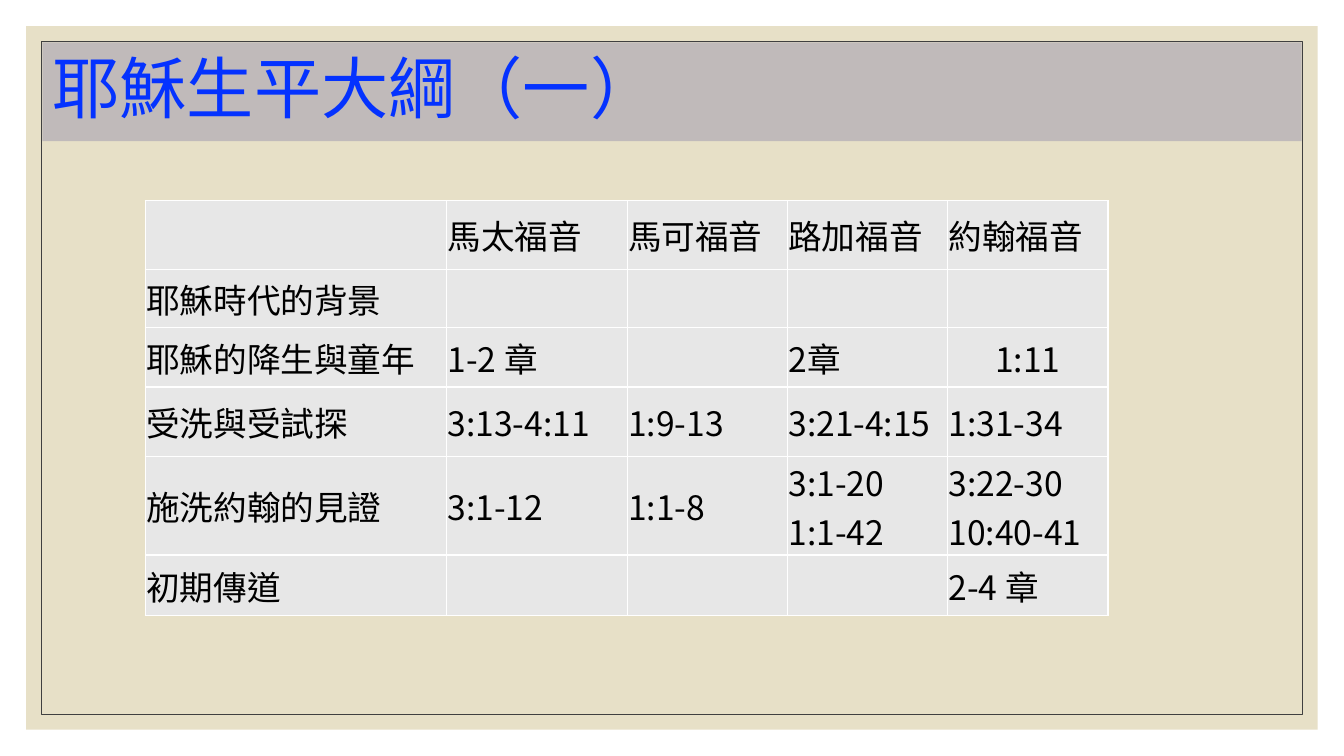
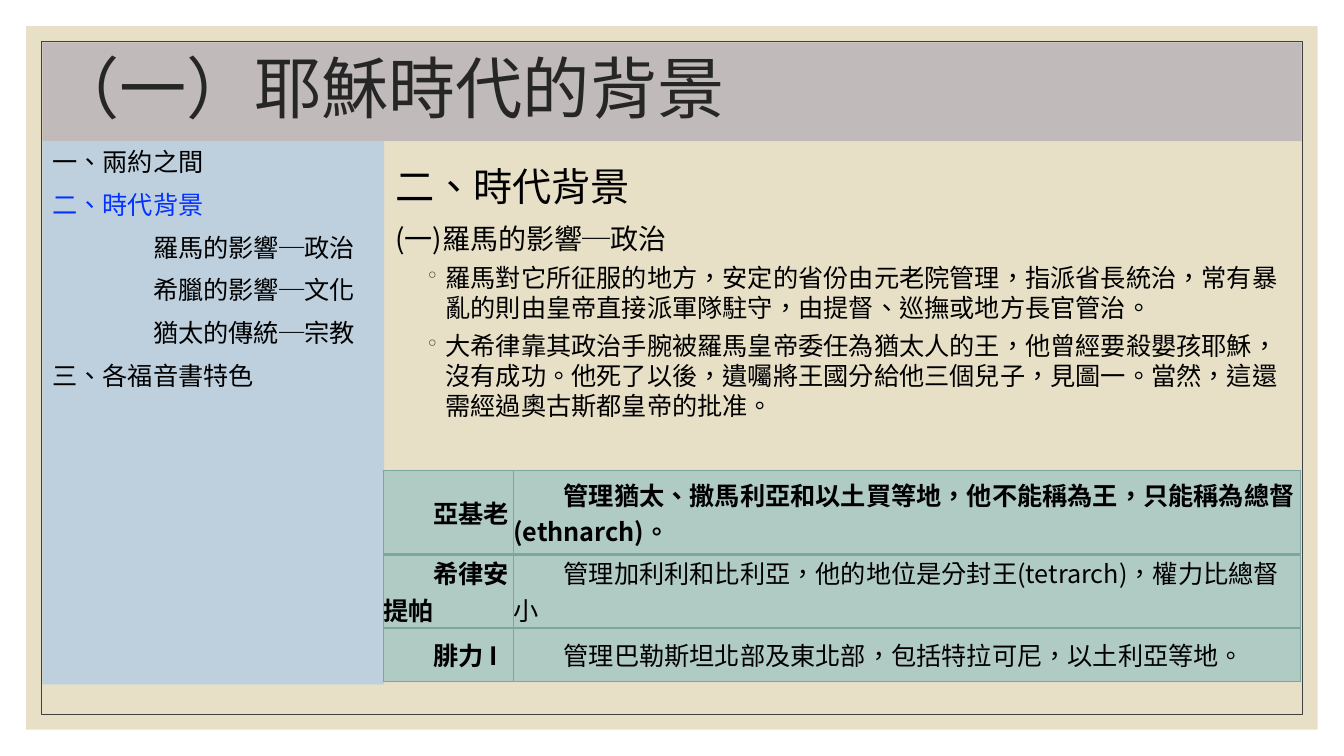
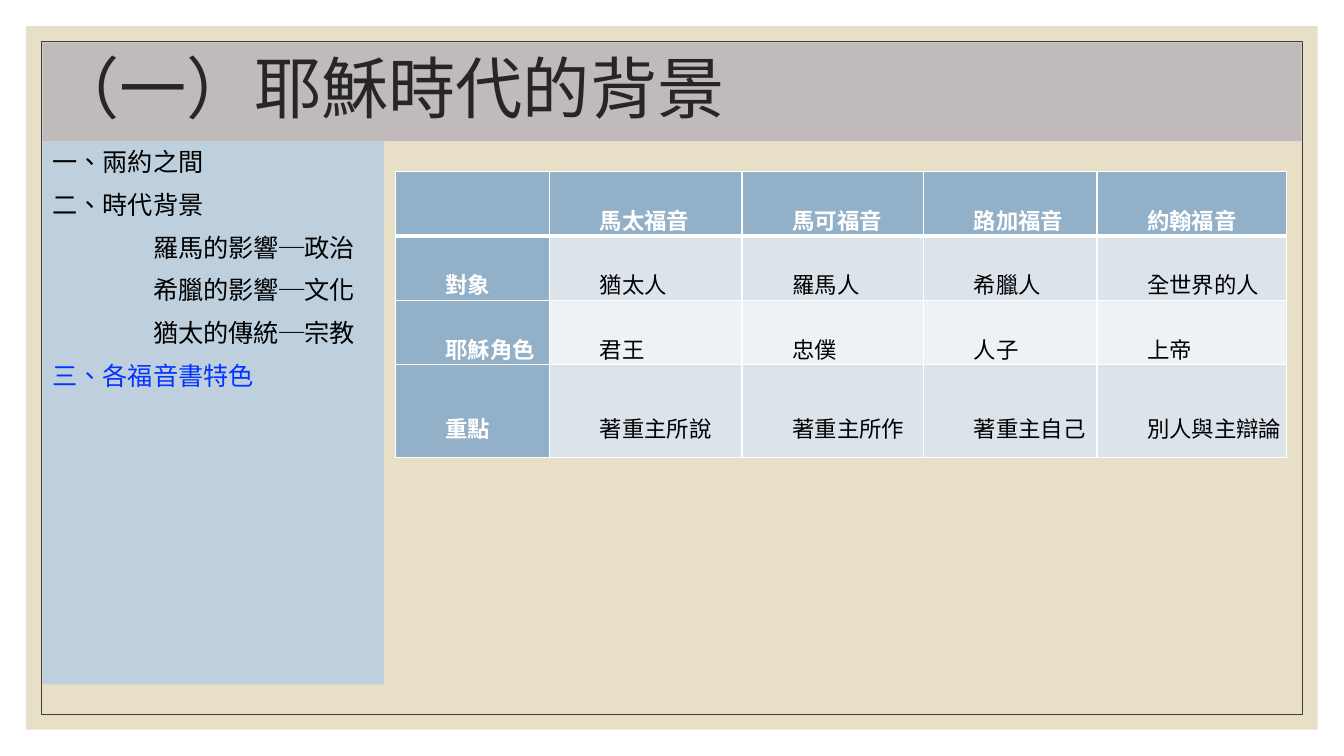
from lxml.etree import SubElement
from pptx import Presentation
from pptx.dml.color import RGBColor
from pptx.enum.shapes import MSO_SHAPE as Shape
from pptx.enum.text import MSO_ANCHOR as Anchor, MSO_AUTO_SIZE as AutoSize, PP_ALIGN as Align
from pptx.oxml import parse_xml
from pptx.oxml.ns import nsdecls, qn
from pptx.util import Emu, Inches, Pt

FONT = "Noto Sans CJK SC"
COLORS = {
    "paper": "E7E0C7", "frame": "404040", "band": "C0BABA", "side": "BED0DE",
    "ink": "262626", "black": "000000", "white": "FFFFFF", "accent": "0432FF",
    "gray": "E7E7E7", "green": "B0CAC4", "green line": "7BA79D",
    "head": "92B0C8", "odd": "DCE4EB", "even": "EEF2F5",
}
# Shared layout, in inches
WIDTH, HEIGHT = 13.33, 7.5
PAPER_MARGIN, FRAME_MARGIN = 0.26, 0.41
BAND = (0.42, 0.42, 12.49, 0.98)
SIDE = (0.42, 1.4, 3.39, 5.39)
BODY = (3.82, 1.56, 9.09, 5.23)
TAB = 1

OUTLINE = ["一、兩約之間", "二、時代背景", "\t羅馬的影響─政治",
           "\t希臘的影響─文化", "\t猶太的傳統─宗教", "三、各福音書特色"]
GOSPELS = ["馬太福音", "馬可福音", "路加福音", "約翰福音"]


def rgb(name):
    return RGBColor.from_string(COLORS[name])


def inches(*lengths):
    return [Inches(length) for length in lengths]


def set_font(para, size, color="black", bold=False):
    font = para.font
    font.size, font.bold, font.name = Pt(size), bold, FONT
    font.color.rgb = rgb(color)
    properties = font._element
    properties.set("lang", "zh-TW")
    SubElement(properties, qn("a:ea")).set("typeface", FONT)


def set_indent(para, left, first):
    properties = para._p.get_or_add_pPr()
    properties.set("marL", str(Inches(left)))
    properties.set("indent", str(Inches(first)))


def add_before_font(para, *parts):
    font = para._p.pPr.find(qn("a:defRPr"))
    for tag in parts:
        name, rest = tag.split(" ", 1)
        font.addprevious(parse_xml(f'<a:{name} {nsdecls("a")} {rest}'))


def add_bullet(para):
    """Hang the paragraph behind a small ring."""
    set_indent(para, 0.5, -0.2)
    add_before_font(para, f'buClr ><a:srgbClr val="{COLORS["ink"]}"/></a:buClr>',
                    'buSzPct val="70000"/>', 'buChar char="◦"/>')


def add_tab_stop(para):
    add_before_font(para, f'tabLst ><a:tab pos="{Inches(TAB)}" algn="l"/></a:tabLst>')


# Frame behind every slide
def add_frame(page, layout):
    def add_sheet(margin):
        sheet = page.shapes.add_shape(
            Shape.RECTANGLE,
            *inches(margin, margin, WIDTH - 2 * margin, HEIGHT - 2 * margin))
        sheet.shadow.inherit = False
        return sheet

    paper, frame = add_sheet(PAPER_MARGIN), add_sheet(FRAME_MARGIN)
    paper.fill.solid()
    paper.fill.fore_color.rgb = rgb("paper")
    paper.line.fill.background()
    frame.fill.background()
    frame.line.color.rgb = rgb("frame")
    frame.line.width = Pt(0.5)
    for index, sheet in enumerate((paper, frame), start=2):
        layout.shapes.element.insert(index, sheet.element)


def add_page(deck, title, color="ink"):
    page = deck.slides.add_slide(deck.slide_layouts[5])
    band = page.shapes.title
    band.left, band.top, band.width, band.height = inches(*BAND)
    band.fill.solid()
    band.fill.fore_color.rgb = rgb("band")
    frame = band.text_frame
    frame.text = title
    frame.auto_size = AutoSize.NONE
    frame.vertical_anchor = Anchor.MIDDLE
    para = frame.paragraphs[0]
    para.alignment, para.line_spacing = Align.LEFT, 0.9
    set_font(para, 48, color)
    return page


def add_text(page, area, lines):
    """Each line is (text, size, color, space before, bulleted)."""
    box = page.shapes.add_textbox(*inches(*area))
    frame = box.text_frame
    frame.word_wrap = True
    frame.text = "\n".join(line[0] for line in lines)
    for para, (text, size, color, before, bulleted) in zip(frame.paragraphs, lines):
        para.space_before, para.line_spacing = Pt(before), 1.0
        set_font(para, size, color)
        if bulleted:
            add_bullet(para)
        if text.startswith("\t"):
            add_tab_stop(para)
    return box


def add_outline(page, current):
    lines = [(text, 18, "accent" if index == current else "black", 9, False)
             for index, text in enumerate(OUTLINE)]
    side = add_text(page, SIDE, lines)
    side.fill.solid()
    side.fill.fore_color.rgb = rgb("side")


# Tables
def set_borders(cell, color, top, bottom):
    widths = {"L": 1, "R": 1, "T": top, "B": bottom}
    for index, (side, width) in enumerate(widths.items()):
        cell._tc.get_or_add_tcPr().insert(index, parse_xml(
            f'<a:ln{side} {nsdecls("a")} w="{Pt(width)}"><a:solidFill>'
            f'<a:srgbClr val="{COLORS[color]}"/></a:solidFill></a:ln{side}>'))


def add_grid(page, corner, widths, heights, rows, look, line, size,
             inset=0, indent=0, spacing=None, head_line=1):
    """look(row, column) gives fill, text colour and bold."""
    area = (*corner, sum(widths), sum(heights))
    table = page.shapes.add_table(len(rows), len(widths), *inches(*area)).table
    table.first_row = table.horz_banding = False
    for column, width in zip(table.columns, widths):
        column.width = Inches(width)
    for row, height in zip(table.rows, heights):
        row.height = Inches(height)
    for r, texts in enumerate(rows):
        for c, text in enumerate(texts):
            cell = table.cell(r, c)
            fill, color, bold = look(r, c)
            cell.text = text
            cell.vertical_anchor = Anchor.MIDDLE
            cell.margin_left = cell.margin_right = cell.margin_top = Inches(inset)
            cell.margin_bottom = Emu(0)
            cell.fill.solid()
            cell.fill.fore_color.rgb = rgb(fill)
            set_borders(cell, line, head_line if r == 1 else 1, head_line if r == 0 else 1)
            for para in cell.text_frame.paragraphs:
                if spacing:
                    para.line_spacing = spacing
                set_indent(para, 0, indent)
                set_font(para, size, color, bold)
    return table


# Slides
def add_life_overview(deck):
    page = add_page(deck, "耶穌生平大綱（一）", "accent")
    rows = [
        ["", *GOSPELS],
        ["耶穌時代的背景", "", "", "", ""],
        ["耶穌的降生與童年", "1-2 章", "", "2章", "1:11"],
        ["受洗與受試探", "3:13-4:11", "1:9-13", "3:21-4:15", "1:31-34"],
        ["施洗約翰的見證", "3:1-12", "1:1-8", "3:1-20\n1:1-42", "3:22-30\n10:40-41"],
        ["初期傳道", "", "", "", "2-4 章"],
    ]
    table = add_grid(page, (1.44, 1.99), [2.99, 1.79, 1.59, 1.59, 1.59],
                     [0.68, 0.58, 0.59, 0.69, 0.67, 0.6], rows,
                     lambda r, c: ("gray", "black", False), "white", 24, inset=0.01)
    table.cell(2, 4).text_frame.paragraphs[0].alignment = Align.CENTER
    return page


def add_roman_rule(deck):
    page = add_page(deck, "（一）耶穌時代的背景")
    add_outline(page, 1)
    add_text(page, BODY, [
        ("二、時代背景", 28, "black", 9, False),
        ("(一)羅馬的影響─政治", 20, "black", 9, False),
        ("羅馬對它所征服的地方，安定的省份由元老院管理，指派省長統治，"
         "常有暴亂的則由皇帝直接派軍隊駐守，由提督、巡撫或地方長官管治。",
         18, "black", 5, True),
        ("大希律靠其政治手腕被羅馬皇帝委任為猶太人的王，他曾經要殺嬰孩耶穌，沒有成功。"
         "他死了以後，遺囑將王國分給他三個兒子，見圖一。當然，這還需經過奧古斯都皇帝的批准。",
         18, "black", 5, True),
    ])
    rows = [
        ["亞基老", "管理猶太、撒馬利亞和以土買等地，他不能稱為王，只能稱為總督(ethnarch)。"],
        ["希律安提帕", "管理加利利和比利亞，他的地位是分封王(tetrarch)，權力比總督小"],
        ["腓力 I", "管理巴勒斯坦北部及東北部，包括特拉可尼，以土利亞等地。"],
    ]
    add_grid(page, (3.8, 4.67), [1.29, 7.81], [0.83, 0.73, 0.53], rows,
             lambda r, c: ("green", "black", r == 0 or c == 0), "green line", 18,
             indent=0.5, head_line=2)


def add_gospel_traits(deck):
    page = add_page(deck, "（一）耶穌時代的背景")
    add_outline(page, 5)
    rows = [
        ["", *GOSPELS],
        ["對象", "猶太人", "羅馬人", "希臘人", "全世界的人"],
        ["耶穌角色", "君王", "忠僕", "人子", "上帝"],
        ["重點", "著重主所說", "著重主所作", "著重主自己", "別人與主辯論"],
    ]

    def look(r, c):
        if r == 0 or c == 0:
            return "head", "white", True
        return ("odd" if r % 2 else "even"), "black", False

    add_grid(page, (3.92, 1.7), [1.53, 1.91, 1.8, 1.72, 1.88],
             [0.64, 0.64, 0.64, 0.92], rows, look, "white", 16,
             indent=0.5, spacing=2.0, head_line=3)


def main():
    deck = Presentation()
    deck.slide_width, deck.slide_height = inches(WIDTH, HEIGHT)
    first = add_life_overview(deck)
    add_frame(first, first.slide_layout)
    add_roman_rule(deck)
    add_gospel_traits(deck)
    deck.save("out.pptx")


if __name__ == "__main__":
    main()
